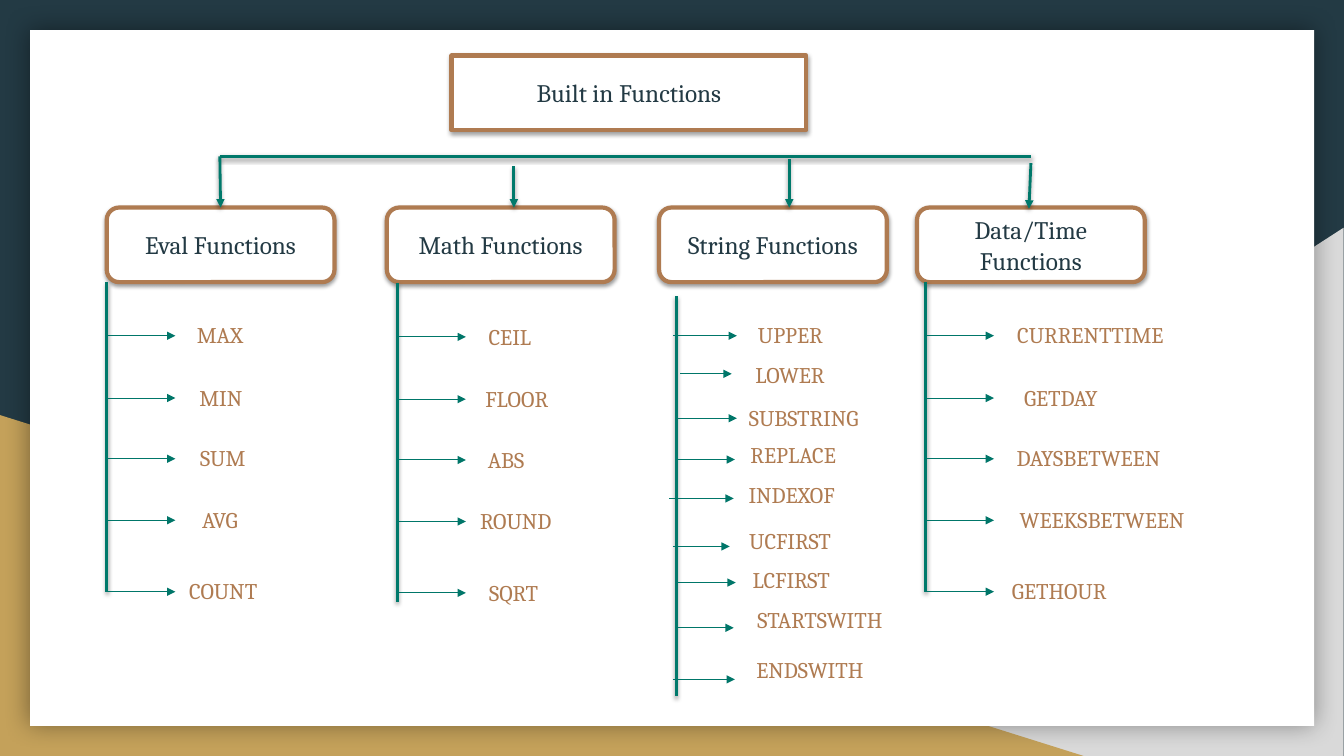
from collections import namedtuple

from lxml import etree
from pptx import Presentation
from pptx.dml.color import RGBColor
from pptx.enum.shapes import MSO_CONNECTOR as Connector, MSO_SHAPE as Shape
from pptx.enum.text import MSO_ANCHOR as Anchor, MSO_AUTO_SIZE as AutoSize, PP_ALIGN as Align
from pptx.oxml.ns import qn
from pptx.util import Cm, Pt

NAVY = RGBColor(0x23, 0x3A, 0x44)
GREY = RGBColor(0xD9, 0xD9, 0xD9)
GOLD = RGBColor(0xC4, 0xA1, 0x5A)
WHITE = RGBColor(0xFF, 0xFF, 0xFF)
BROWN = RGBColor(0xAF, 0x7B, 0x51)
GREEN = RGBColor(0x00, 0x79, 0x6B)
DARK_GREEN = RGBColor(0x00, 0x76, 0x69)
FONT = "Cambria"

# Shadow: opacity in percent, blur and distance in points, direction in degrees
Shadow = namedtuple("Shadow", "opacity blur distance direction")
PAGE_SHADOW = Shadow(40, 18, 0, 0)
SOFT_SHADOW = Shadow(38, 3.1, 1.6, 90)

# All lengths below are centimetres
HEADING_TOP, HEADING_WIDTH, HEADING_HEIGHT = 5.23, 5.74, 1.88
LABEL_HEIGHT, LABEL_RISE, ARROW_LENGTH = 1.02, 0.53, 1.73
ROWS = [8.46, 10.03, 11.56, 13.11, 14.91]

# Heading, heading left, spine x, spine top, spine bottom, row shift,
# then each function with its label's left and width
EVEN_BRANCHES = [
    ("Eval Functions", 2.69, 2.69, 7.11, 14.91, 0,
     [("MAX", 4.55, 1.98), ("MIN", 4.42, 2.29), ("SUM", 4.47, 2.29),
      ("AVG", 4.42, 2.24), ("COUNT", 4.24, 2.77)]),
    ("Math Functions", 9.75, 10.01, 7.14, 15.16, 0.03,
     [("CEIL", 11.86, 1.98), ("FLOOR", 11.73, 2.59), ("ABS", 11.89, 1.73),
      ("ROUND", 11.73, 2.54), ("SQRT", 11.56, 2.77)]),
    ("Data/Time Functions", 23.11, 23.32, 7.11, 14.91, 0,
     [("CURRENTTIME", 25.17, 4.62), ("GETDAY", 25.02, 3.43),
      ("DAYSBETWEEN", 25.07, 4.72), ("WEEKSBETWEEN", 25.02, 5.51),
      ("GETHOUR", 24.41, 4.57)]),
]

# Function, label left, top and width, arrow start, end and height
STRING_FUNCTIONS = [
    ("UPPER", 18.69, 7.92, 2.46, 16.97, 18.57, 8.46),
    ("LOWER", 18.54, 8.92, 2.74, 17.15, 18.44, 9.42),
    ("SUBSTRING", 18.39, 10.01, 3.73, 17.04, 18.57, 10.54),
    ("REPLACE", 18.49, 10.95, 3.0, 17.04, 18.52, 11.58),
    ("INDEXOF", 18.44, 11.96, 3.02, 16.87, 18.49, 12.56),
    ("UCFIRST", 18.49, 13.11, 2.84, 16.97, 18.39, 13.77),
    ("LCFIRST", 18.52, 14.1, 2.84, 17.04, 18.54, 14.68),
    ("STARTSWITH", 18.67, 15.11, 3.99, 17.04, 18.49, 15.82),
    ("ENDSWITH", 18.49, 16.36, 3.84, 16.97, 18.52, 17.12),
]

# Arrows from the crossbar to the headings: start x, y and end x, y
DROPS = [(5.54, 3.94, 5.56, 5.23), (12.95, 4.19, 12.95, 5.23),
         (19.89, 4.01, 19.89, 5.23), (25.98, 4.11, 25.93, 5.26)]


def set_effects(shape, shadow=None):
    """Replace the theme's shadow; call once fill and line are set."""
    effects = etree.SubElement(shape._element.spPr, qn("a:effectLst"))
    if shadow:
        outer = etree.SubElement(
            effects, qn("a:outerShdw"), blurRad=str(Pt(shadow.blur)),
            dist=str(Pt(shadow.distance)), dir=str(shadow.direction * 60000),
            algn="ctr", rotWithShape="0")
        black = etree.SubElement(outer, qn("a:srgbClr"), val="000000")
        etree.SubElement(black, qn("a:alpha"), val=str(shadow.opacity * 1000))


def write(shape, text, size, color):
    frame = shape.text_frame
    frame.text = text
    frame.word_wrap = True
    frame.auto_size = AutoSize.NONE
    frame.vertical_anchor = Anchor.MIDDLE
    paragraph = frame.paragraphs[0]
    paragraph.alignment = Align.CENTER
    font = paragraph.runs[0].font
    font.name, font.size, font.color.rgb = FONT, Pt(size), color


def add_plain(slide, kind, left, top, width, height, color, shadow=None):
    plain = slide.shapes.add_shape(kind, Cm(left), Cm(top), Cm(width), Cm(height))
    plain.fill.solid()
    plain.fill.fore_color.rgb = color
    plain.line.fill.background()
    set_effects(plain, shadow)
    return plain


def style_heading(heading, text):
    heading.fill.solid()
    heading.fill.fore_color.rgb = WHITE
    heading.line.color.rgb = BROWN
    heading.line.width = Pt(3)
    set_effects(heading, SOFT_SHADOW)
    write(heading, text, 18, NAVY)


def add_heading(slide, text, left):
    heading = slide.shapes.add_shape(
        Shape.ROUNDED_RECTANGLE, Cm(left), Cm(HEADING_TOP),
        Cm(HEADING_WIDTH), Cm(HEADING_HEIGHT))
    style_heading(heading, text)


def place_title(slide, text):
    """Turn the title placeholder into the root box, above the backdrop."""
    title = slide.shapes.title
    title.left, title.top = Cm(11.38), Cm(1.4)
    title.width, title.height = Cm(8.94), Cm(HEADING_HEIGHT)
    outline = etree.SubElement(title._element.spPr, qn("a:prstGeom"), prst="roundRect")
    etree.SubElement(outline, qn("a:avLst"))
    style_heading(title, text)
    slide.shapes._spTree.append(title._element)


def add_label(slide, text, left, top, width):
    label = add_plain(slide, Shape.RECTANGLE, left, top, width, LABEL_HEIGHT, WHITE)
    write(label, text, 16, BROWN)


def add_line(slide, x1, y1, x2, y2, color=GREEN, width=2, shadow=SOFT_SHADOW, arrow=False):
    connector = slide.shapes.add_connector(
        Connector.STRAIGHT, Cm(x1), Cm(y1), Cm(x2), Cm(y2))
    connector.line.color.rgb = color
    connector.line.width = Pt(width)
    if arrow:
        etree.SubElement(connector.line._get_or_add_ln(), qn("a:tailEnd"), type="triangle")
    set_effects(connector, shadow)


def add_twig(slide, start, end, y):
    add_line(slide, start, y, end, y, DARK_GREEN, 0.75, None, arrow=True)


def add_backdrop(slide):
    slide.background.fill.solid()
    slide.background.fill.fore_color.rgb = NAVY
    right_corner = add_plain(slide, Shape.RIGHT_TRIANGLE, 13.26, 5.74, 20.6, 13.31, GREY)
    right_corner._element.spPr.xfrm.set("flipH", "1")
    add_plain(slide, Shape.RIGHT_TRIANGLE, 0, 10.46, 27.31, 8.59, GOLD)
    add_plain(slide, Shape.RECTANGLE, 0.76, 0.76, 32.36, 17.53, WHITE, PAGE_SHADOW)


def add_branch(slide, heading, left, spine, top, bottom, functions):
    add_heading(slide, heading, left)
    add_line(slide, spine, top, spine, bottom)
    for name, label_left, label_top, width, start, end, y in functions:
        add_label(slide, name, label_left, label_top, width)
        add_twig(slide, start, end, y)


def main():
    deck = Presentation()
    deck.slide_width, deck.slide_height = Cm(33.87), Cm(19.05)
    slide = deck.slides.add_slide(deck.slide_layouts[5])
    add_backdrop(slide)
    place_title(slide, "Built in Functions")

    for heading, left, spine, top, bottom, shift, labels in EVEN_BRANCHES:
        functions = [
            (name, label_left, row + shift - LABEL_RISE, width,
             spine, spine + ARROW_LENGTH, row + shift)
            for row, (name, label_left, width) in zip(ROWS, labels)]
        add_branch(slide, heading, left, spine, top, bottom, functions)
    add_branch(slide, "String Functions", 16.61, 17.04, 7.47, 17.55, STRING_FUNCTIONS)

    add_line(slide, 5.54, 3.94, 25.98, 3.94)
    for drop in DROPS:
        add_line(slide, *drop, arrow=True)
    deck.save("out.pptx")


if __name__ == "__main__":
    main()
